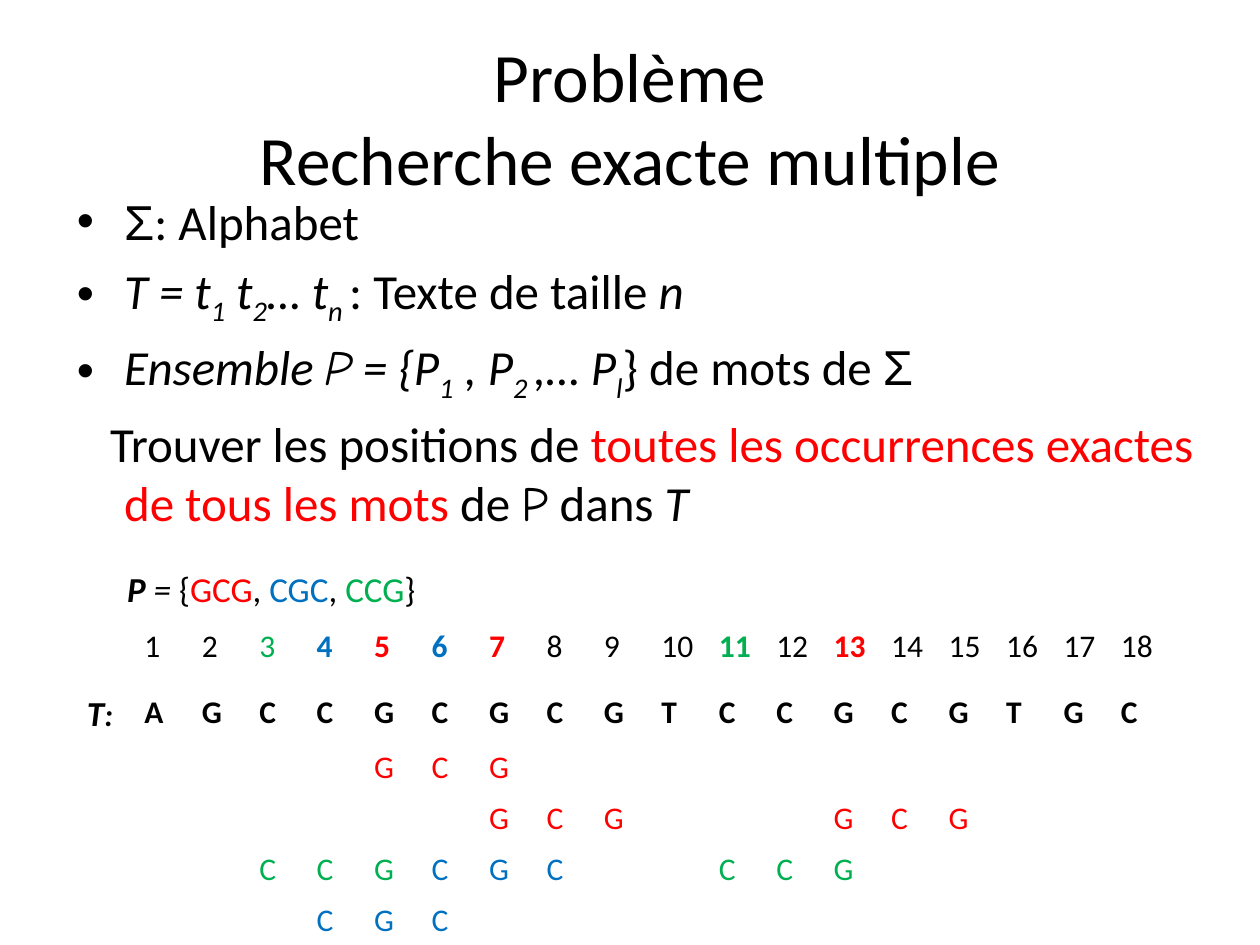
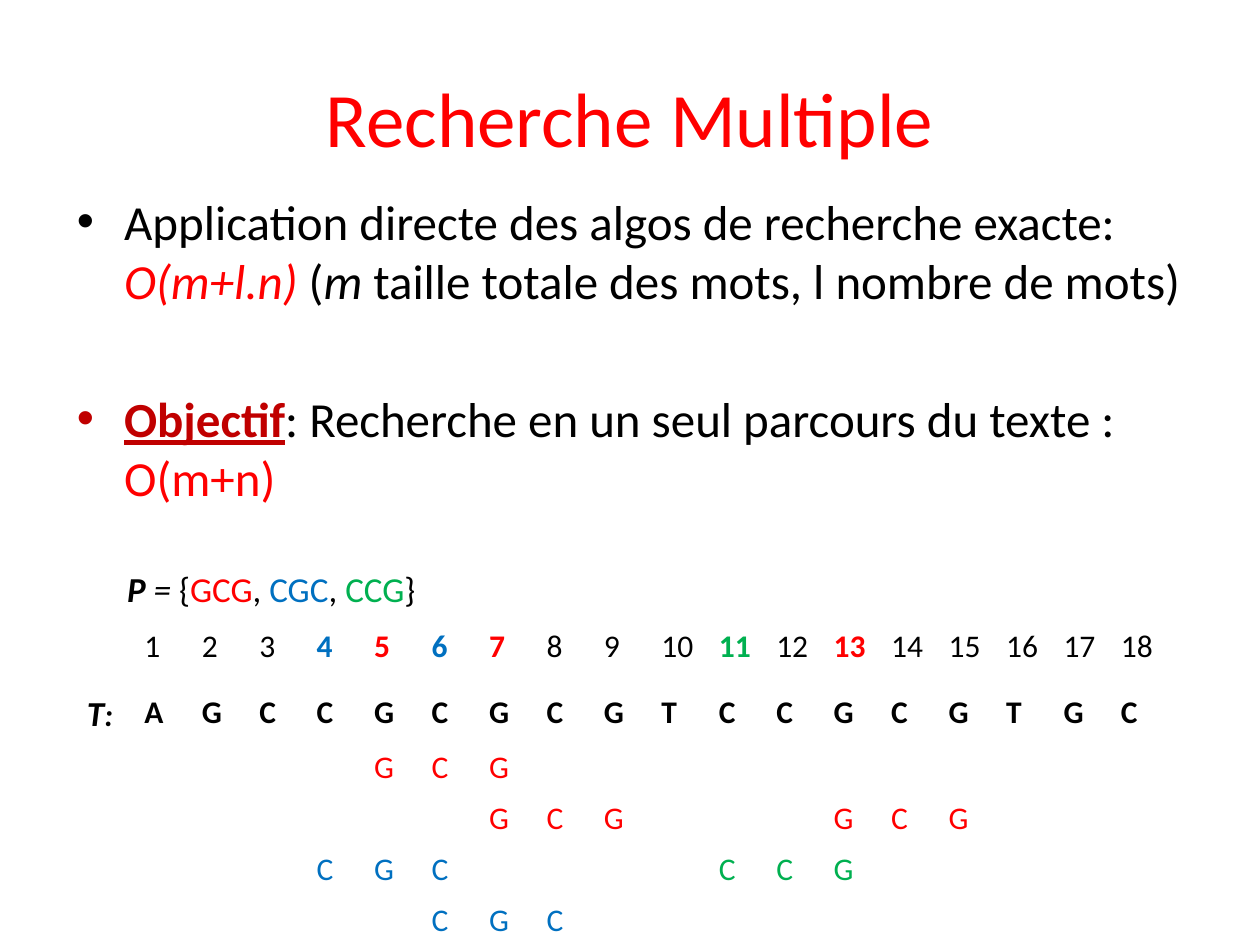
from lxml.etree import Element
from pptx import Presentation
from pptx.dml.color import RGBColor
from pptx.enum.text import MSO_ANCHOR, MSO_AUTO_SIZE, PP_ALIGN
from pptx.oxml.ns import qn
from pptx.util import Pt

COLORS = {"black": "000000", "red": "FF0000", "blue": "0070C0",
          "green": "00B050", "dark": "C00000"}
FONTS = {"main": "Calibri", "greek": "Arial", "script": "Comic Neue"}
WORDS = {"GCG": "red", "CGC": "blue", "CCG": "green"}
TEXT = "AGCCGCGCGTCCGCGTGC"
COL, ROWS = 32.84, [37.5] + [26] * 5

# Each hit is (table row, start in the text, word).
SHARED = [(2, 5, "GCG"), (3, 7, "GCG"), (3, 13, "GCG"), (4, 11, "CCG")]
FIRST = SHARED + [(4, 3, "CCG"), (4, 6, "CGC"), (5, 4, "CGC")]
SECOND = SHARED + [(4, 4, "CGC"), (5, 6, "CGC")]


def paint(font, color):
    font.color.rgb = RGBColor.from_string(COLORS[color])


def set_font(para, size, color="black"):
    para.font.name = FONTS["main"]
    para.font.size = Pt(size)
    paint(para.font, color)


def add_runs(para, spans):
    """Add plain strings or (text, marks); marks are b, i, u, sub, a font or a colour."""
    for span in spans:
        text, marks = (span, "") if isinstance(span, str) else span
        run = para.add_run()
        run.text = text
        for mark in marks.split():
            if mark in COLORS:
                paint(run.font, mark)
            elif mark in FONTS:
                run.font.name = FONTS[mark]
            elif mark == "b":
                run.font.bold = True
            elif mark == "i":
                run.font.italic = True
            elif mark == "u":
                run.font.underline = True
            elif mark == "sub":
                run._r.get_or_add_rPr().set("baseline", "-25000")


def place(shape, left, top, width, height):
    shape.left, shape.top = Pt(left), Pt(top)
    shape.width, shape.height = Pt(width), Pt(height)


def add_title(slide, text, size, color):
    title = slide.shapes.title
    place(title, 36, 21.6, 648, 90)
    frame = title.text_frame
    frame.text = text
    frame.auto_size = MSO_AUTO_SIZE.NONE
    frame.vertical_anchor = MSO_ANCHOR.MIDDLE
    para = frame.paragraphs[0]
    para.alignment = PP_ALIGN.CENTER
    set_font(para, size, color)


def add_list(slide, items):
    body = slide.placeholders[1]
    place(body, 36.7, 105.8, 663, 198.7)
    frame = body.text_frame
    frame.auto_size = MSO_AUTO_SIZE.NONE
    for num, spans in enumerate(items):
        para = frame.add_paragraph() if num else frame.paragraphs[0]
        set_font(para, 28)
        add_runs(para, spans)
    return frame.paragraphs


def drop_bullet(para, indent):
    props = para._p.get_or_add_pPr()
    props.set("marL", str(Pt(27)))
    props.set("indent", str(Pt(indent)))
    props.insert(0, Element(qn("a:buNone")))


def add_words(slide):
    """Show the set of words above the table."""
    box = slide.shapes.add_textbox(Pt(65.5), Pt(321), Pt(182), Pt(31.5))
    frame = box.text_frame
    frame.word_wrap = False
    frame.auto_size = MSO_AUTO_SIZE.SHAPE_TO_FIT_TEXT
    para = frame.paragraphs[0]
    set_font(para, 20)
    spans = [("P ", "b i"), ("= ", "i"), "{"]
    for word, color in WORDS.items():
        spans += [(word, color), ", "]
    add_runs(para, spans[:-1] + ["}"])


def fill_cell(cell, text, color="black", bold=False):
    para = cell.text_frame.paragraphs[0]
    set_font(para, 18, color)
    para.font.bold = bold
    add_runs(para, [text])


def add_table(slide, hits, light=()):
    """Lay the hits under the text; starts in light are not bold."""
    count = len(TEXT) + 1
    table = slide.shapes.add_table(len(ROWS), count, Pt(42.5), Pt(355),
                                   Pt(COL * count), Pt(sum(ROWS))).table
    table.first_row = table.horz_banding = False
    for col in table.columns:
        col.width = Pt(COL)
    for row, height in zip(table.rows, ROWS):
        row.height = Pt(height)
    for cell in table.iter_cells():
        cell.fill.background()

    starts = {start: WORDS[word] for _, start, word in hits}
    for pos, char in enumerate(TEXT, 1):
        fill_cell(table.cell(0, pos), str(pos), starts.get(pos, "black"),
                  pos in starts and pos not in light)
        fill_cell(table.cell(1, pos), char, bold=True)
    for row, start, word in hits:
        for pos, char in enumerate(word, start):
            fill_cell(table.cell(row, pos), char, WORDS[word])

    label = table.cell(1, 0).text_frame.paragraphs[0]
    set_font(label, 18)
    label.font.bold = label.font.italic = True
    add_runs(label, ["T", ":"])
    label.runs[0].font.size = Pt(20)


def add_problem(slide):
    add_title(slide, "Problème\vRecherche exacte multiple", 39.6, "black")
    paras = add_list(slide, [
        [("Σ", "greek"), ": Alphabet"],
        [("T = t", "i"), ("1", "i sub"), (" t", "i"), ("2", "i sub"),
         ("… t", "i"), ("n ", "i sub"), ": Texte de taille ", ("n", "i")],
        [("Ensemble ", "i"), ("P", "i script"), (" = {P", "i"), ("1", "i sub"),
         (" , P", "i"), ("2 ", "i sub"), (",… P", "i"), ("l", "i sub"),
         "} de mots de ", ("Σ", "greek")],
        ["Trouver les positions de ",
         ("toutes les occurrences exactes de tous les mots ", "red"),
         "de ", ("P", "script"), " dans ", ("T", "i")],
    ])
    drop_bullet(paras[-1], -8)
    add_table(slide, FIRST, light=(3,))
    add_words(slide)


def add_search(slide):
    add_title(slide, "Recherche Multiple", 44, "red")
    paras = add_list(slide, [
        ["Application directe des algos de recherche exacte: ",
         ("O(m+l.n)", "red i"), " (", ("m", "i"),
         " taille totale des mots, l nombre de mots)"],
        [("Objectif", "dark b u"), ": Recherche en un seul parcours du texte : ",
         ("O(m+n)", "red")],
    ])
    paras[-1].space_before = Pt(45.4)
    add_table(slide, SECOND)
    add_words(slide)


def main():
    deck = Presentation()
    deck.slide_width, deck.slide_height = Pt(720), Pt(540)
    for build in (add_problem, add_search):
        build(deck.slides.add_slide(deck.slide_layouts[1]))
    deck.save("out.pptx")


if __name__ == "__main__":
    main()
